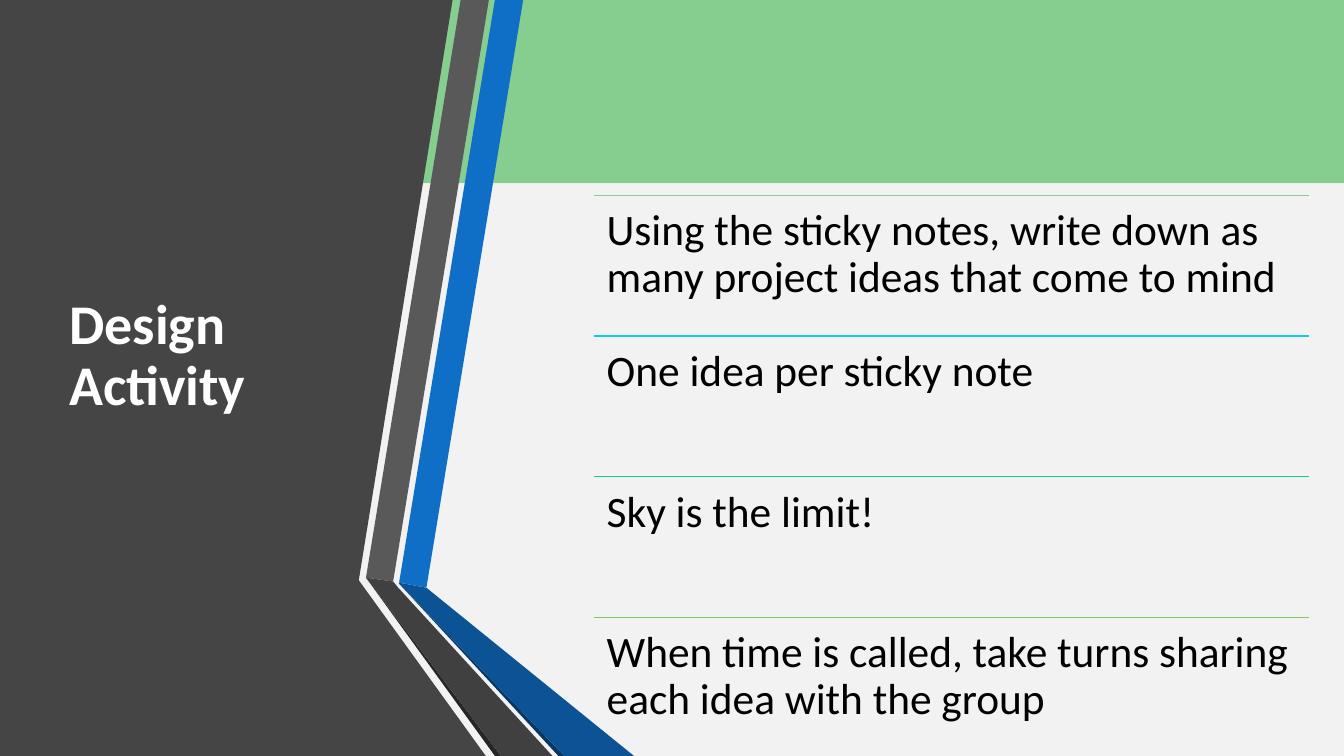
from dataclasses import dataclass

from lxml.etree import SubElement
from pptx import Presentation
from pptx.dml.color import RGBColor
from pptx.enum.shapes import MSO_CONNECTOR as Connector, MSO_SHAPE as Shape
from pptx.enum.text import MSO_ANCHOR as Anchor, PP_ALIGN as Align
from pptx.oxml.ns import qn
from pptx.slide import Slide
from pptx.util import Pt

PAGE_WIDTH, PAGE_HEIGHT = 960, 540
FONT = "Calibri"

WHITE = RGBColor(0xFF, 0xFF, 0xFF)
BLACK = RGBColor(0x00, 0x00, 0x00)
GREEN = RGBColor(0x86, 0xCD, 0x90)
PALE_GREY = RGBColor(0xF2, 0xF2, 0xF2)
PANEL_GREY = RGBColor(0x45, 0x45, 0x45)
MID_GREY = RGBColor(0x59, 0x59, 0x59)
DARK_GREY = RGBColor(0x40, 0x40, 0x40)
NEAR_BLACK = RGBColor(0x26, 0x26, 0x26)
BLUE = RGBColor(0x0F, 0x6F, 0xC6)
DEEP_BLUE = RGBColor(0x0B, 0x53, 0x94)
NAVY = RGBColor(0x08, 0x37, 0x63)
CYAN = RGBColor(0x0B, 0xD0, 0xD9)
TEAL = RGBColor(0x10, 0xCF, 0x9B)
LEAF = RGBColor(0x7C, 0xCA, 0x62)


@dataclass
class Band:
    top: float
    height: float
    color: RGBColor


@dataclass
class Polygon:
    color: RGBColor
    points: list[tuple[float, float]]


@dataclass
class Step:
    text: str
    color: RGBColor


@dataclass
class TextStyle:
    size: float
    color: RGBColor
    bold: bool = False
    anchor: Anchor = Anchor.TOP
    inset_x: float = 7.2
    inset_y: float = 3.6


BAND_SPLIT = 131
BANDS = [
    Band(0, BAND_SPLIT, GREEN),
    Band(BAND_SPLIT, PAGE_HEIGHT - BAND_SPLIT, PALE_GREY),
]

# Side panel, then the two folded ribbons
POLYGONS = [
    Polygon(PANEL_GREY, [(0, 0), (323.3, 0), (256.3, 414.5), (347, 540), (0, 540)]),
    Polygon(BLUE, [(285.1, 416.2), (304.6, 419.8), (373.7, 0), (353.5, 0)]),
    Polygon(MID_GREY, [(349.2, 0), (329, 0), (261.4, 412.6), (280.8, 415.4)]),
    Polygon(NEAR_BLACK, [(261.4, 412.6), (353.5, 540), (357.8, 540)]),
    Polygon(NAVY, [(285.1, 416.9), (398.9, 540), (403.2, 540)]),
    Polygon(DEEP_BLUE, [(285.1, 416.2), (285.1, 416.9), (403.2, 540),
                        (452.9, 540), (304.6, 419.8)]),
    Polygon(DARK_GREY, [(394.6, 540), (284.4, 419.8), (280.8, 415.4),
                        (261.4, 412.6), (357.8, 540)]),
]

STEPS = [
    Step("Using the sticky notes, write down as many project ideas that come to mind", GREEN),
    Step("One idea per sticky note", CYAN),
    Step("Sky is the limit!", TEAL),
    Step("When time is called, take turns sharing each idea with the group", LEAF),
]
STEP_LEFT, STEP_TOP, STEP_WIDTH, STEP_PITCH = 424.1, 139.5, 511.2, 100.5

TITLE_STYLE = TextStyle(40, WHITE, bold=True, anchor=Anchor.MIDDLE)
STEP_STYLE = TextStyle(31, BLACK, inset_x=9.3, inset_y=9.3)


def paint(shape, color: RGBColor) -> None:
    shape.shadow.inherit = False
    shape.fill.solid()
    shape.fill.fore_color.rgb = color
    shape.line.fill.background()


def add_band(page: Slide, band: Band) -> None:
    shape = page.shapes.add_shape(
        Shape.RECTANGLE, 0, Pt(band.top), Pt(PAGE_WIDTH), Pt(band.height))
    paint(shape, band.color)


def add_polygon(page: Slide, polygon: Polygon) -> None:
    start, *rest = [(Pt(x), Pt(y)) for x, y in polygon.points]
    builder = page.shapes.build_freeform(*start)
    builder.add_line_segments(rest, close=True)
    paint(builder.convert_to_shape(), polygon.color)


def add_text(page: Slide, text: str, left: float, top: float, width: float,
             height: float, style: TextStyle) -> None:
    box = page.shapes.add_textbox(Pt(left), Pt(top), Pt(width), Pt(height))
    frame = box.text_frame
    frame.word_wrap = True
    frame.vertical_anchor = style.anchor
    frame.margin_left = frame.margin_right = Pt(style.inset_x)
    frame.margin_top = frame.margin_bottom = Pt(style.inset_y)
    para = frame.paragraphs[0]
    para.text = text
    para.alignment = Align.LEFT
    para.line_spacing = 0.9
    para.font.name = FONT
    para.font.size = Pt(style.size)
    para.font.bold = style.bold
    para.font.color.rgb = style.color


def add_rule(page: Slide, left: float, top: float, width: float, color: RGBColor) -> None:
    rule = page.shapes.add_connector(
        Connector.STRAIGHT, Pt(left), Pt(top), Pt(left + width), Pt(top))
    rule.line.color.rgb = color
    rule.line.width = Pt(1)
    SubElement(rule.element.spPr, qn("a:effectLst"))


def main() -> None:
    deck = Presentation()
    deck.slide_width, deck.slide_height = Pt(PAGE_WIDTH), Pt(PAGE_HEIGHT)
    page = deck.slides.add_slide(deck.slide_layouts[6])

    # Background and side artwork
    for band in BANDS:
        add_band(page, band)
    for polygon in POLYGONS:
        add_polygon(page, polygon)

    # Title
    add_text(page, "Design Activity", 42.5, 54, 218.9, 401.8, TITLE_STYLE)

    # Ruled list of steps
    for index, step in enumerate(STEPS):
        top = STEP_TOP + index * STEP_PITCH
        add_rule(page, STEP_LEFT, top, STEP_WIDTH, step.color)
        add_text(page, step.text, STEP_LEFT, top, STEP_WIDTH, STEP_PITCH, STEP_STYLE)

    deck.save("out.pptx")


if __name__ == "__main__":
    main()
